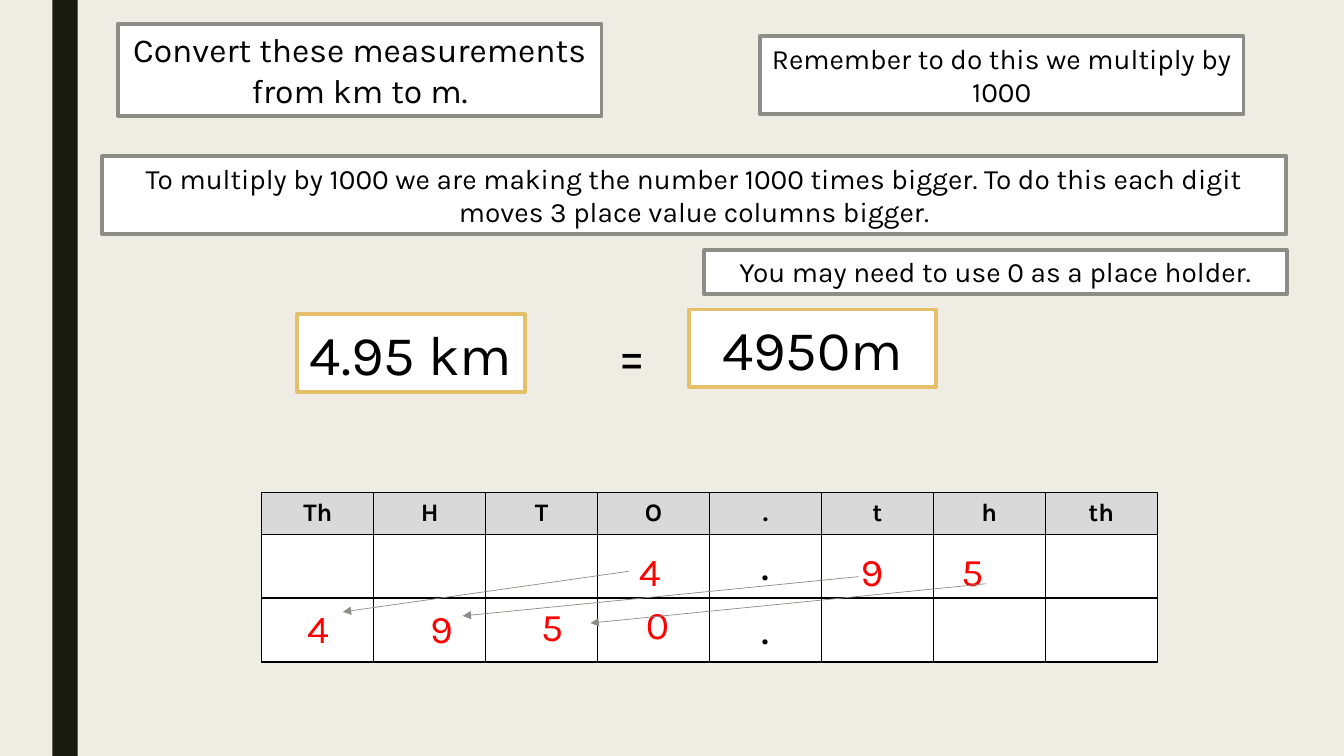
"""Build a slide on converting kilometres to metres with a place value table."""
from dataclasses import dataclass

from lxml.etree import SubElement
from pptx import Presentation
from pptx.dml.color import RGBColor as Rgb
from pptx.enum.shapes import MSO_CONNECTOR as Link, MSO_SHAPE as Form
from pptx.enum.text import MSO_ANCHOR as Anchor, MSO_AUTO_SIZE as Fit, PP_ALIGN as Align
from pptx.oxml import parse_xml
from pptx.oxml.ns import nsdecls, qn
from pptx.util import Cm, Pt


@dataclass(frozen=True)
class Theme:
    """Colours, font and type sizes."""
    font: str = "Karla"
    back: str = "EFEDE3"
    bar: str = "191B0E"
    ink: str = "000000"
    red: str = "FF0000"
    white: str = "FFFFFF"
    head: str = "D9D9D9"
    grey: str = "8C8D86"
    gold: str = "E6C069"
    cell: int = 18
    note: int = 20
    task: int = 24
    digit: int = 28
    point: int = 32
    sum: int = 40
    frame: float = 2.75
    thin: float = 0.5


T = Theme()
WIDE, HIGH = 33.87, 19.05
BAR = (1.32, 0, 0.64, HIGH)
BOXES = [
    ("Convert these measurements from km to m.", (2.97, 0.61, 12.19, 2.31), T.task, T.grey),
    ("Remember to do this we multiply by 1000", (19.15, 0.91, 12.19, 1.96), T.note, T.grey),
    ("To multiply by 1000 we are making the number 1000 times bigger. "
     "To do this each digit moves 3 place value columns bigger.",
     (2.57, 3.94, 29.85, 1.96), T.note, T.grey),
    ("You may need to use 0 as a place holder.", (17.75, 6.3, 14.68, 1.12), T.note, T.grey),
    ("4.95 km", (7.49, 7.92, 5.74, 1.96), T.sum, T.gold),
    ("4950m", (17.37, 7.8, 6.22, 1.96), T.sum, T.gold),
]
EQUALS = ("=", (13.61, 7.92, 4.62, 1.96))
PLACES = ["Th", "H", "T", "O", ".", "t", "h", "th"]
ROWS = [1.04, 1.61, 1.61]
GRID = (6.6, 12.42)
COL = 2.82
DIGITS = [
    ("4", 15.85, 13.67), ("9", 21.44, 13.67), ("5", 23.98, 13.67),
    ("4", 7.49, 15.11), ("9", 10.59, 15.11), ("5", 13.39, 15.06), ("0", 16.03, 15.01),
]
DIGIT = (1.09, 1.45)
ARROWS = [
    (15.85, 14.38, 8.64, 15.42),
    (21.64, 14.53, 11.66, 15.52),
    (24.84, 14.71, 14.88, 15.7),
]


def cms(spot):
    return [Cm(n) for n in spot]


def paint(fill, tint):
    fill.solid()
    fill.fore_color.rgb = Rgb.from_string(tint)


def write(frame, text, size, tint=T.ink, align=Align.CENTER, bold=False):
    para = frame.paragraphs[0]
    para.text = text
    para.alignment = align
    font = para.font
    font.name, font.size, font.bold = T.font, Pt(size), bold
    font.color.rgb = Rgb.from_string(tint)


def add_rect(shapes, spot, tint, edge=None):
    rect = shapes.add_shape(Form.RECTANGLE, *cms(spot))
    rect.shadow.inherit = False
    paint(rect.fill, tint)
    if edge:
        rect.line.color.rgb = Rgb.from_string(edge)
        rect.line.width = Pt(T.frame)
    else:
        rect.line.fill.background()
    return rect


def add_box(shapes, text, spot, size, edge):
    frame = add_rect(shapes, spot, T.white, edge).text_frame
    frame.word_wrap = True
    frame.auto_size = Fit.SHAPE_TO_FIT_TEXT
    frame.vertical_anchor = Anchor.TOP
    write(frame, text, size)


def add_text(shapes, text, spot, size, tint, align, wrap):
    box = shapes.add_textbox(*cms(spot))
    box.text_frame.word_wrap = wrap
    box.text_frame.auto_size = Fit.SHAPE_TO_FIT_TEXT
    write(box.text_frame, text, size, tint, align)
    return box


def add_edges(cell):
    props = cell._tc.get_or_add_tcPr()
    for i, side in enumerate(("lnL", "lnR", "lnT", "lnB")):
        props.insert(i, parse_xml(
            f'<a:{side} {nsdecls("a")} w="{Pt(1)}"><a:solidFill>'
            f'<a:srgbClr val="{T.ink}"/></a:solidFill></a:{side}>'))


def add_grid(shapes):
    size = (COL * len(PLACES), sum(ROWS))
    grid = shapes.add_table(len(ROWS), len(PLACES), *cms(GRID + size)).table
    grid.first_row = grid.horz_banding = False
    for col in grid.columns:
        col.width = Cm(COL)
    for r, tall in enumerate(ROWS):
        grid.rows[r].height = Cm(tall)
        for c, place in enumerate(PLACES):
            cell = grid.cell(r, c)
            paint(cell.fill, T.white if r else T.head)
            add_edges(cell)
            if r == 0:
                cell.vertical_anchor = Anchor.MIDDLE
                write(cell.text_frame, place, T.cell, bold=True)
            elif place == ".":
                write(cell.text_frame, place, T.point)


def add_arrow(shapes, ends):
    arrow = shapes.add_connector(Link.STRAIGHT, *cms(ends))
    arrow.line.color.rgb = Rgb.from_string(T.grey)
    arrow.line.width = Pt(T.thin)
    SubElement(arrow.line._get_or_add_ln(), qn("a:tailEnd"), type="triangle")
    SubElement(arrow._element.spPr, qn("a:effectLst"))
    return arrow


def main():
    deck = Presentation()
    deck.slide_width, deck.slide_height = cms((WIDE, HIGH))
    slide = deck.slides.add_slide(deck.slide_layouts[6])
    paint(slide.background.fill, T.back)
    shapes = slide.shapes
    add_rect(shapes, BAR, T.bar)
    add_grid(shapes)
    for box in BOXES:
        add_box(shapes, *box)
    add_text(shapes, *EQUALS, T.sum, T.ink, Align.CENTER, True)
    digits = [add_text(shapes, text, (x, y) + DIGIT, T.digit, T.red, Align.LEFT, False)
              for text, x, y in DIGITS]
    arrows = [add_arrow(shapes, ends) for ends in ARROWS]
    arrows[0].begin_connect(digits[0], 1)
    deck.save("out.pptx")


if __name__ == "__main__":
    main()
